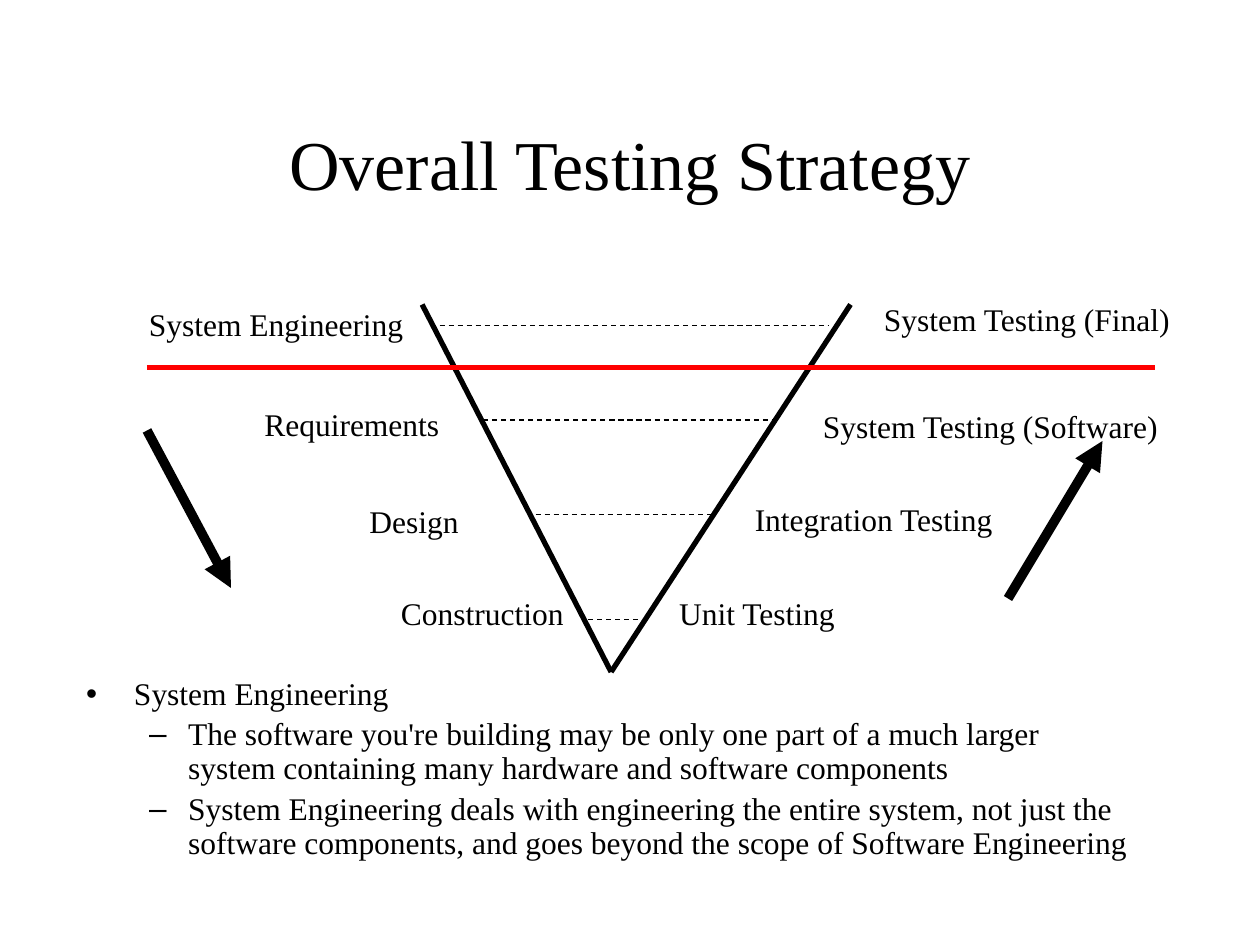
from pptx import Presentation
from pptx import util as u
from pptx.dml.color import RGBColor
from pptx.enum import dml, shapes, text
from pptx.oxml.ns import qn
from lxml import etree

INK = {"black": "000000", "red": "FF0000"}
FONT = "Times New Roman"
WIDE, HIGH = u.Inches(10), u.Inches(7.5)
COLS, ROWS = 120, 90  # grid of twelfths of an inch

# Label, column, row, width in columns
LABELS = [
    ("System Engineering", 13, 28.5, 27),
    ("Requirements", 24, 38, 19.1),
    ("Design", 34, 47.2, 10.9),
    ("Construction", 37, 56, 17.9),
    ("Unit Testing", 63.5, 56, 17.5),
    ("Integration Testing", 70.7, 47, 25.3),
    ("System Testing (Software)", 77.2, 38.2, 34.6),
    ("System Testing (Final)", 83, 28, 29.9),
]
# Dashed links: left column, right column, row
LINKS = [(41, 79, 31), (46, 74, 40), (51, 68, 49), (56, 61, 59)]
# Level, text
POINTS = [
    (0, "System Engineering"),
    (1, "The software you're building may be only one part of a much larger "
        "system containing many hardware and software components"),
    (1, "System Engineering deals with engineering the entire system, not just "
        "the software components, and goes beyond the scope of Software Engineering"),
]
# Left margin and hanging indent in inches, by level
INDENTS = [(0.38, -0.38), (0.81, -0.31)]


def col(n):
    return round(WIDE * n / COLS)


def row(n):
    return round(HIGH * n / ROWS)


def place(shape, x, y, w, h):
    shape.left, shape.top = col(x), row(y)
    shape.width, shape.height = col(w), row(h)


def add_run(para, words, size=18):
    run = para.add_run()
    run.text = words
    run.font.size = u.Pt(size)
    run.font.name = FONT
    run.font.color.rgb = RGBColor.from_string(INK["black"])


def add_title(slide, words):
    title = slide.shapes.title
    place(title, 9, 8, 102, 15)
    frame = title.text_frame
    frame.vertical_anchor = text.MSO_ANCHOR.MIDDLE
    frame.auto_size = text.MSO_AUTO_SIZE.NONE
    para = frame.paragraphs[0]
    para.alignment = text.PP_ALIGN.CENTER
    add_run(para, words, 40)


def add_list(slide, points):
    body = slide.placeholders[1]
    place(body, 7, 64, 102, 23)
    frame = body.text_frame
    frame.auto_size = text.MSO_AUTO_SIZE.NONE
    for i, (level, words) in enumerate(points):
        para = frame.add_paragraph() if i else frame.paragraphs[0]
        para.level = level
        para.line_spacing = 0.9
        para.space_before = u.Pt(3.6)
        left, hang = INDENTS[level]
        props = para._p.get_or_add_pPr()
        props.set("marL", str(u.Inches(left)))
        props.set("indent", str(u.Inches(hang)))
        add_run(para, words)


def add_label(slide, words, x, y, w):
    box = slide.shapes.add_textbox(col(x), row(y), col(w), u.Inches(0.4))
    frame = box.text_frame
    frame.word_wrap = False
    # A fixed box keeps its left edge and its text on one line
    frame.auto_size = text.MSO_AUTO_SIZE.NONE
    add_run(frame.paragraphs[0], words)


def add_line(slide, start, end, width=3, ink="black", dash=False, arrow=False):
    line = slide.shapes.add_connector(
        shapes.MSO_CONNECTOR.STRAIGHT,
        col(start[0]), row(start[1]), col(end[0]), row(end[1]))
    line.line.width = u.Pt(width)
    line.line.color.rgb = RGBColor.from_string(INK[ink])
    if dash:
        line.line.dash_style = dml.MSO_LINE.DASH
    if arrow:
        etree.SubElement(line.line._get_or_add_ln(), qn("a:tailEnd"), type="triangle")
    etree.SubElement(line._element.spPr, qn("a:effectLst"))


def main():
    deck = Presentation()
    deck.slide_width, deck.slide_height = WIDE, HIGH
    slide = deck.slides.add_slide(deck.slide_layouts[1])

    add_title(slide, "Overall Testing Strategy")
    for label in LABELS:
        add_label(slide, *label)

    # The V and its links
    tip = (58.2, 64)
    add_line(slide, (40.2, 29), tip)
    add_line(slide, tip, (81, 29))
    for left, right, y in LINKS:
        add_line(slide, (left, y), (right, y), 0.75, dash=True)

    # Direction arrows
    add_line(slide, (96, 57), (105, 42), 5.5, arrow=True)
    add_line(slide, (14, 41), (22, 56), 5.5, arrow=True)

    add_list(slide, POINTS)

    # Border between system and software
    add_line(slide, (14, 35), (110, 35), ink="red")

    deck.save("out.pptx")


if __name__ == "__main__":
    main()
